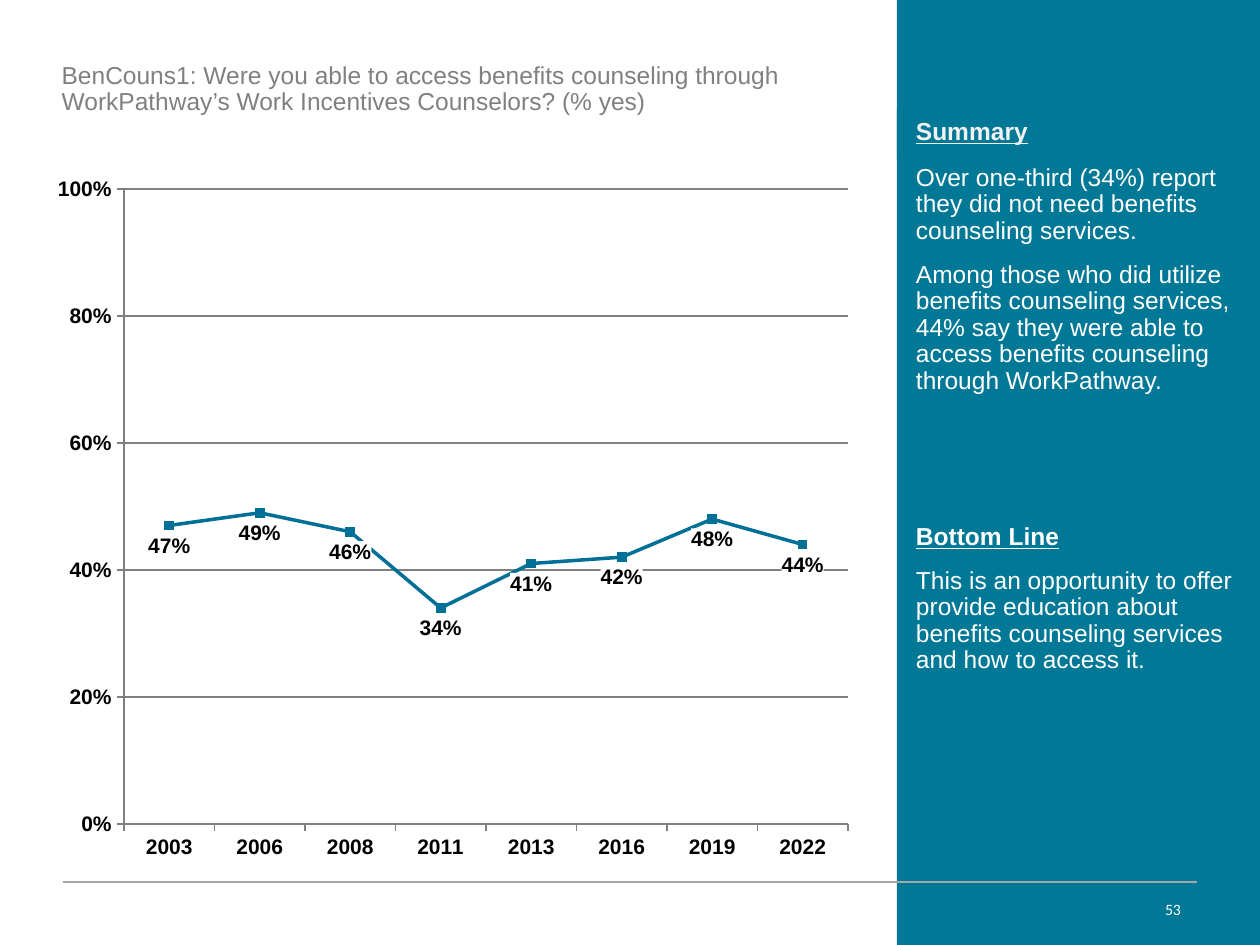
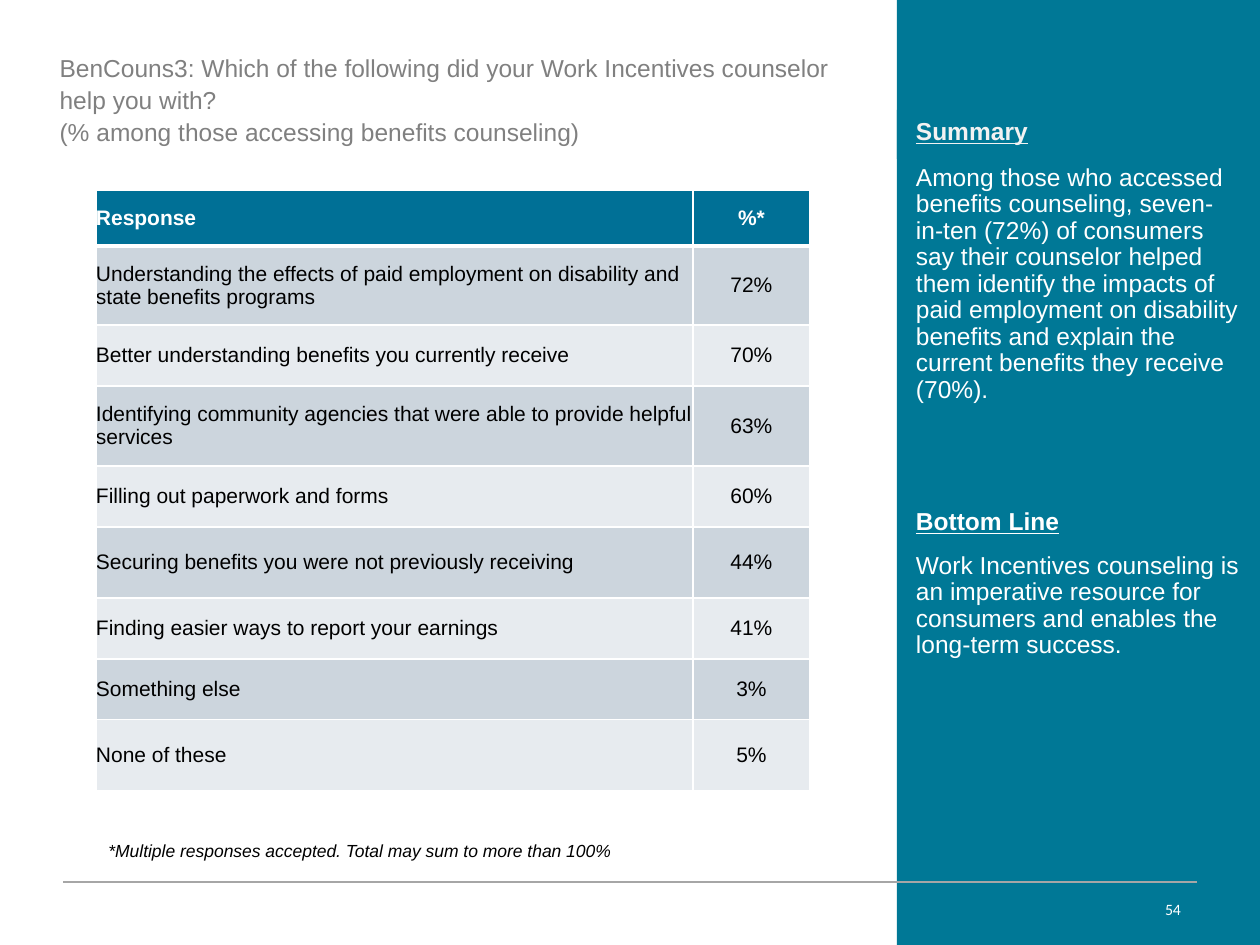
"""Build two benefits counseling survey slides: a trend chart and a response table."""
from dataclasses import dataclass

from lxml.etree import SubElement
from pptx import Presentation
from pptx.chart.data import CategoryChartData
from pptx.dml.color import RGBColor
from pptx.enum.chart import XL_CHART_TYPE, XL_LABEL_POSITION, XL_MARKER_STYLE, XL_TICK_MARK
from pptx.enum.shapes import MSO_CONNECTOR, MSO_SHAPE
from pptx.enum.text import MSO_ANCHOR, MSO_AUTO_SIZE, PP_ALIGN
from pptx.oxml import parse_xml
from pptx.oxml.ns import nsdecls, qn
from pptx.util import Emu, Pt


@dataclass(frozen=True)
class Theme:
    font: str = "Arial"
    number_font: str = "Calibri"
    band: RGBColor = RGBColor.from_string("007896")
    accent: RGBColor = RGBColor.from_string("007096")
    title: RGBColor = RGBColor.from_string("808080")
    rule: RGBColor = RGBColor.from_string("A6A6A6")
    heading: RGBColor = RGBColor.from_string("F2F2F2")
    white: RGBColor = RGBColor.from_string("FFFFFF")
    black: RGBColor = RGBColor.from_string("000000")
    row_dark: RGBColor = RGBColor.from_string("CCD5DD")
    row_light: RGBColor = RGBColor.from_string("E7EBEF")
    text_size: Pt = Pt(14)
    data_size: Pt = Pt(12)
    note_size: Pt = Pt(10)
    number_size: Pt = Pt(9)


T = Theme()
SCALE = 914400 / 126


def px(*values):
    return [Emu(round(v * SCALE)) for v in values]


def write(tf, lines, color, size=T.text_size, spacing=None, align=PP_ALIGN.LEFT, font=T.font):
    """Write (text, bold, underline) lines as the paragraphs of a text frame."""
    tf.word_wrap = True
    tf.auto_size = MSO_AUTO_SIZE.NONE
    for i, (text, bold, underline) in enumerate(lines):
        p = tf.paragraphs[0] if i == 0 else tf.add_paragraph()
        pPr = p._p.get_or_add_pPr()
        pPr.set("marL", "0")
        pPr.set("indent", "0")
        SubElement(pPr, qn("a:buNone"))
        p.alignment = align
        p.space_before = Pt(10 if i else 0)
        if spacing:
            p.line_spacing = spacing
        r = p.add_run()
        r.text = text
        r.font.name, r.font.size, r.font.color.rgb = font, size, color
        r.font.bold, r.font.underline = bold, underline


prs = Presentation()
prs.slide_width, prs.slide_height = px(1260, 945)

pages = [
    dict(
        number="53",
        title=["BenCouns1: Were you able to access benefits counseling through "
               "WorkPathway’s Work Incentives Counselors? (% yes)"],
        title_box=(49, 57, 808, 84), title_spacing=0.9,
        summary=["Over one-third (34%) report they did not need benefits counseling services.",
                 "Among those who did utilize benefits counseling services, 44% say they were "
                 "able to access benefits counseling through WorkPathway."],
        bottom_top=518,
        bottom="This is an opportunity to offer provide education about benefits "
               "counseling services and how to access it.",
    ),
    dict(
        number="54",
        title=["BenCouns3: Which of the following did your Work Incentives counselor",
               "help you with?",
               "(% among those accessing benefits counseling)"],
        title_box=(47, 59, 808, 102), title_spacing=0.5,
        summary=["Among those who accessed benefits counseling, seven-in-ten (72%) of consumers "
                 "say their counselor helped them identify the impacts of paid employment on "
                 "disability benefits and explain the current benefits they receive (70%)."],
        bottom_top=503,
        bottom="Work Incentives counseling is an imperative resource for consumers and "
               "enables the long-term success.",
    ),
]

slides = []
for page in pages:
    s = prs.slides.add_slide(prs.slide_layouts[3])
    slides.append(s)
    title, summary, bottom = s.placeholders

    band = s.shapes.add_shape(MSO_SHAPE.RECTANGLE, *px(897, 0, 363, 945))
    heading = s.shapes.add_shape(MSO_SHAPE.RECTANGLE, *px(897, 110, 363, 49))
    for sp in (band, heading):
        sp.shadow.inherit = False
        sp.fill.solid()
        sp.fill.fore_color.rgb = T.band
        sp.line.fill.background()
        title.element.addprevious(sp.element)
    write(heading.text_frame, [("Summary", True, True)], T.heading)

    number = s.shapes.add_textbox(*px(722, 890, 475, 38))
    write(number.text_frame, [(page["number"], False, False)], T.white, T.number_size,
          align=PP_ALIGN.RIGHT, font=T.number_font)
    number.text_frame.vertical_anchor = MSO_ANCHOR.MIDDLE
    number.text_frame.margin_right = px(16)[0]

    x1, y, x2 = px(63, 882, 1197)
    rule = s.shapes.add_connector(MSO_CONNECTOR.STRAIGHT, x1, y, x2, y)
    rule.line.color.rgb, rule.line.width = T.rule, Pt(0.75)
    SubElement(rule.element.spPr, qn("a:effectLst"))

    title.left, title.top, title.width, title.height = px(*page["title_box"])
    write(title.text_frame, [(t, False, False) for t in page["title"]], T.title,
          spacing=page["title_spacing"])
    title.text_frame.vertical_anchor = MSO_ANCHOR.TOP

    summary.left, summary.top, summary.width, summary.height = px(897, 159, 363, 310)
    write(summary.text_frame, [(t, False, False) for t in page["summary"]], T.white, spacing=0.9)
    bottom.left, bottom.top, bottom.width, bottom.height = px(897, page["bottom_top"], 363, 346)
    write(bottom.text_frame, [("Bottom Line", True, True), (page["bottom"], False, False)],
          T.white, spacing=0.9)
    for sp in (heading, summary, bottom):
        sp.text_frame.vertical_anchor = MSO_ANCHOR.TOP
        sp.text_frame.margin_left, sp.text_frame.margin_right = px(19, 19)

chart_slide, table_slide = slides

data = CategoryChartData(number_format="0%")
data.categories = ["2003", "2006", "2008", "2011", "2013", "2016", "2019", "2022"]
data.add_series("Series 1", [0.47, 0.49, 0.46, 0.34, 0.41, 0.42, 0.48, 0.44])
chart = chart_slide.shapes.add_chart(
    XL_CHART_TYPE.LINE_MARKERS, *px(42, 164, 823, 709), data).chart
chart.has_legend = chart.has_title = False
chart.font.name, chart.font.size, chart.font.bold = T.font, T.data_size, True
chart.font.color.rgb = T.black

value_axis = chart.value_axis
value_axis.minimum_scale, value_axis.maximum_scale, value_axis.major_unit = 0, 1, 0.2
value_axis.tick_labels.number_format = "0%"
value_axis.tick_labels.number_format_is_linked = False
value_axis.has_major_gridlines = True
for axis in (value_axis, chart.category_axis):
    axis.major_tick_mark = XL_TICK_MARK.OUTSIDE
for part in (value_axis, chart.category_axis, value_axis.major_gridlines):
    part.format.line.color.rgb, part.format.line.width = T.title, Pt(0.75)

chart.plots[0].vary_by_categories = False
series = chart.plots[0].series[0]
series.smooth = False
series.format.line.color.rgb, series.format.line.width = T.accent, Pt(2)
series.marker.style, series.marker.size = XL_MARKER_STYLE.SQUARE, 5
series.marker.format.fill.solid()
series.marker.format.fill.fore_color.rgb = T.accent
series.marker.format.line.color.rgb = T.accent
labels = series.data_labels
labels.show_value = True
labels.number_format, labels.number_format_is_linked = "0%", False
labels.position = XL_LABEL_POSITION.BELOW
chart.element.xpath(".//c:ser/c:dLbls/c:numFmt")[0].addnext(parse_xml(
    f'<c:spPr {nsdecls("c", "a")}><a:solidFill><a:srgbClr val="{T.white}"/>'
    '</a:solidFill></c:spPr>'))

plot_area = chart.element.xpath(".//c:plotArea")[0]
for old in plot_area.findall(qn("c:layout")):
    plot_area.remove(old)
layout = parse_xml(f'<c:layout {nsdecls("c")}><c:manualLayout/></c:layout>')
for tag, val in [("layoutTarget", "inner"), ("xMode", "edge"), ("yMode", "edge"),
                 ("x", 82 / 823), ("y", 25 / 709), ("w", 724 / 823), ("h", 635 / 709)]:
    SubElement(layout[0], qn(f"c:{tag}")).set("val", str(val))
plot_area.insert(0, layout)

rows = [
    ("Response", "%*", 56),
    ("Understanding the effects of paid employment on disability and state benefits programs",
     "72%", 79),
    ("Better understanding benefits you currently receive", "70%", 61),
    ("Identifying community agencies that were able to provide helpful services", "63%", 80),
    ("Filling out paperwork and forms", "60%", 61),
    ("Securing benefits you were not previously receiving", "44%", 71),
    ("Finding easier ways to report your earnings", "41%", 61),
    ("Something else", "3%", 61),
    ("None of these", "5%", 71),
]
table = table_slide.shapes.add_table(
    len(rows), 2, *px(96, 190, 714, sum(row[2] for row in rows))).table
table.first_row = table.horz_banding = False
table.columns[0].width, table.columns[1].width = px(597, 117)
for i, (response, share, height) in enumerate(rows):
    table.rows[i].height = px(height)[0]
    fill = T.accent if i == 0 else T.row_dark if i % 2 else T.row_light
    for j, text in enumerate((response, share)):
        cell = table.cell(i, j)
        cell.margin_left = cell.margin_right = cell.margin_top = cell.margin_bottom = 0
        cell.vertical_anchor = MSO_ANCHOR.MIDDLE
        cell.fill.solid()
        cell.fill.fore_color.rgb = fill
        tcPr = cell._tc.get_or_add_tcPr()
        for k, side in enumerate("LRTB"):
            thick = (i == 0 and side == "B") or (i == 1 and side == "T")
            tcPr.insert(k, parse_xml(
                f'<a:ln{side} {nsdecls("a")} w="{Pt(3 if thick else 1)}"><a:solidFill>'
                f'<a:srgbClr val="{T.white}"/></a:solidFill></a:ln{side}>'))
        p = cell.text_frame.paragraphs[0]
        p.alignment = PP_ALIGN.CENTER if j else PP_ALIGN.LEFT
        r = p.add_run()
        r.text = text
        r.font.name, r.font.size, r.font.bold = T.font, T.data_size, i == 0
        r.font.color.rgb = T.black if i else T.white

note = table_slide.shapes.add_textbox(*px(96, 834, 714, 34))
write(note.text_frame, [("*Multiple responses accepted. Total may sum to more than 100%",
                         False, False)], T.black, T.note_size)
note.text_frame.paragraphs[0].runs[0].font.italic = True

prs.save("out.pptx")
